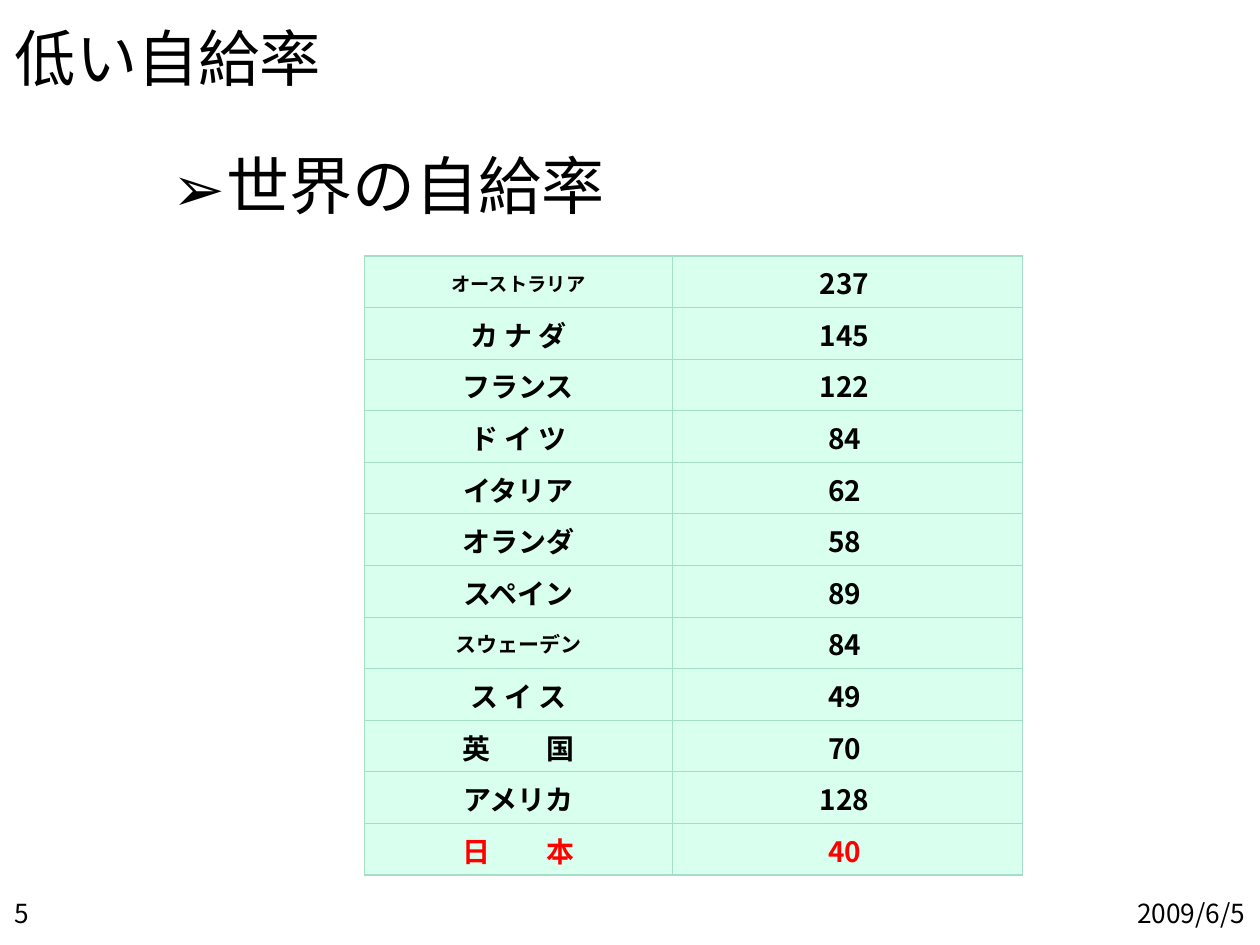
"""Build the slide on food self-sufficiency rates around the world."""
from lxml import etree
from pptx import Presentation
from pptx.dml.color import RGBColor
from pptx.enum.text import MSO_ANCHOR, PP_ALIGN
from pptx.oxml.ns import qn
from pptx.util import Cm, Pt

LEFT, MID, RIGHT = PP_ALIGN.LEFT, PP_ALIGN.CENTER, PP_ALIGN.RIGHT
MIDDLE = MSO_ANCHOR.MIDDLE
FACE = "Noto Sans CJK JP"
BLACK, RED, MINT, EDGE = "000000", "FF0000", "D9FFEE", "A5DEC6"


def hue(code):
    """Turn a hex string into a colour."""
    return RGBColor.from_string(code)


def write(para, text, size, color=BLACK, bold=False):
    """Add one styled run to a paragraph."""
    run = para.add_run()
    run.text = text
    font = run.font
    font.size, font.bold, font.name = Pt(size), bold, FACE
    font.color.rgb = hue(color)
    etree.SubElement(font._element, qn("a:ea"), typeface=FACE)
    return run


deck = Presentation()
deck.slide_width, deck.slide_height = Cm(25.4), Cm(19.05)
slide = deck.slides.add_slide(deck.slide_layouts[6])

texts = [
    ("2009/6/5", 20.12, 18.06, 5.28, 1, 15, RIGHT, 0, 0.3),
    ("5", 0, 18.06, 2, 1, 15, LEFT, 0, 0.3),
    ("低い自給率", 0, 0, 25.4, 2, 35, LEFT, 0.3, 0),
    ("世界の自給率", 3.18, 2.57, 19.25, 2, 36, LEFT, 0.3, 0),
]
for text, x, y, wide, high, size, align, top, base in texts:
    box = slide.shapes.add_textbox(Cm(x), Cm(y), Cm(wide), Cm(high))
    frame = box.text_frame
    frame.word_wrap, frame.vertical_anchor = True, MIDDLE
    frame.margin_left = frame.margin_right = Cm(0.3)
    frame.margin_top, frame.margin_bottom = Cm(top), Cm(base)
    para = frame.paragraphs[0]
    para.alignment = align
    write(para, text, size)

props = para._p.get_or_add_pPr()
props.set("marL", str(Cm(1.08)))
props.set("indent", str(-Cm(1.08)))
etree.SubElement(props, qn("a:buFont"), typeface=FACE)
etree.SubElement(props, qn("a:buChar"), char="➢")

rates = [
    ("オーストラリア", 237), ("カ ナ ダ", 145), ("フランス", 122),
    ("ド イ ツ", 84), ("イタリア", 62), ("オランダ", 58),
    ("スペイン", 89), ("スウェーデン", 84), ("ス イ ス", 49),
    ("英国", 70), ("アメリカ", 128), ("日本", 40),
]
small = {"オーストラリア": 11, "スウェーデン": 12}
high = Cm(1.04)
grid = slide.shapes.add_table(
    len(rates), 2, Cm(7.34), Cm(5.16), Cm(13.28), high * len(rates)).table
grid.first_row = grid.horz_banding = False
grid.columns[0].width, grid.columns[1].width = Cm(6.22), Cm(7.06)

for row, (land, rate) in enumerate(rates):
    grid.rows[row].height = high
    color = RED if land == "日本" else BLACK
    for col, text in enumerate((land, f"{rate} ")):
        cell = grid.cell(row, col)
        cell.vertical_anchor = MIDDLE
        cell.margin_left = cell.margin_right = cell.margin_top = Cm(0.03)
        cell.margin_bottom = 0
        para = cell.text_frame.paragraphs[0]
        para.alignment = MID
        if len(text) == 2 and col == 0:
            first = write(para, text[0], 16, color, True)
            first.font._element.set("spc", "3200")
            text = text[1]
        write(para, text, small.get(text, 16), color, True)
        props = cell._tc.get_or_add_tcPr()
        for side in ("lnL", "lnR", "lnT", "lnB"):
            line = etree.SubElement(props, qn(f"a:{side}"), w=str(Pt(0.75)))
            fill = etree.SubElement(line, qn("a:solidFill"))
            etree.SubElement(fill, qn("a:srgbClr"), val=EDGE)
        cell.fill.solid()
        cell.fill.fore_color.rgb = hue(MINT)

deck.save("out.pptx")
